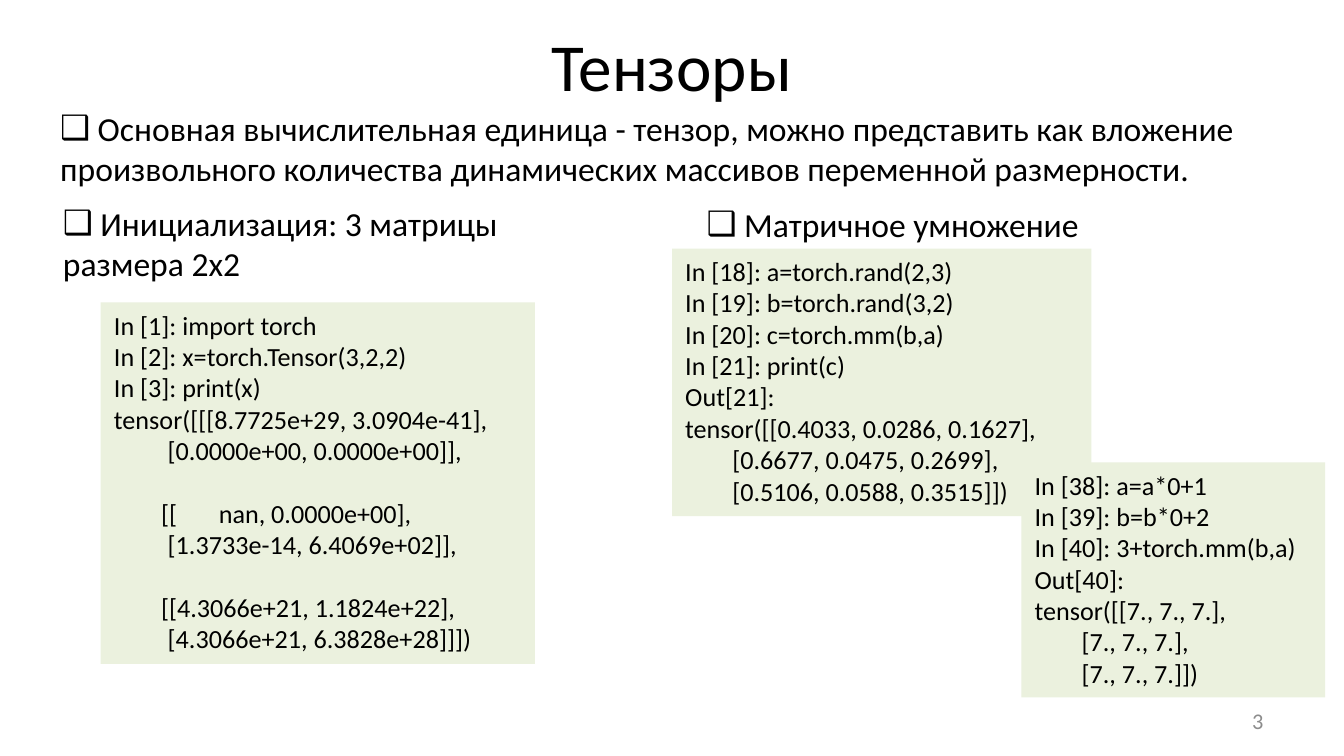
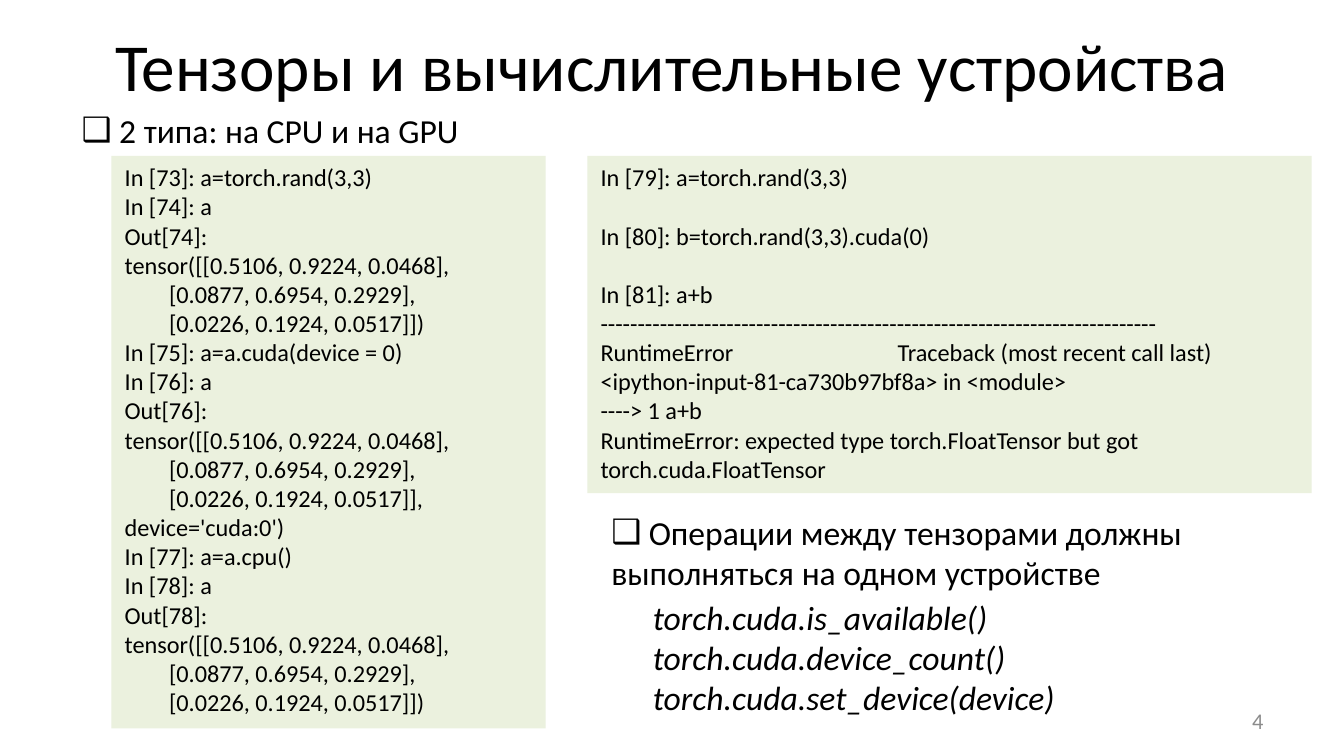
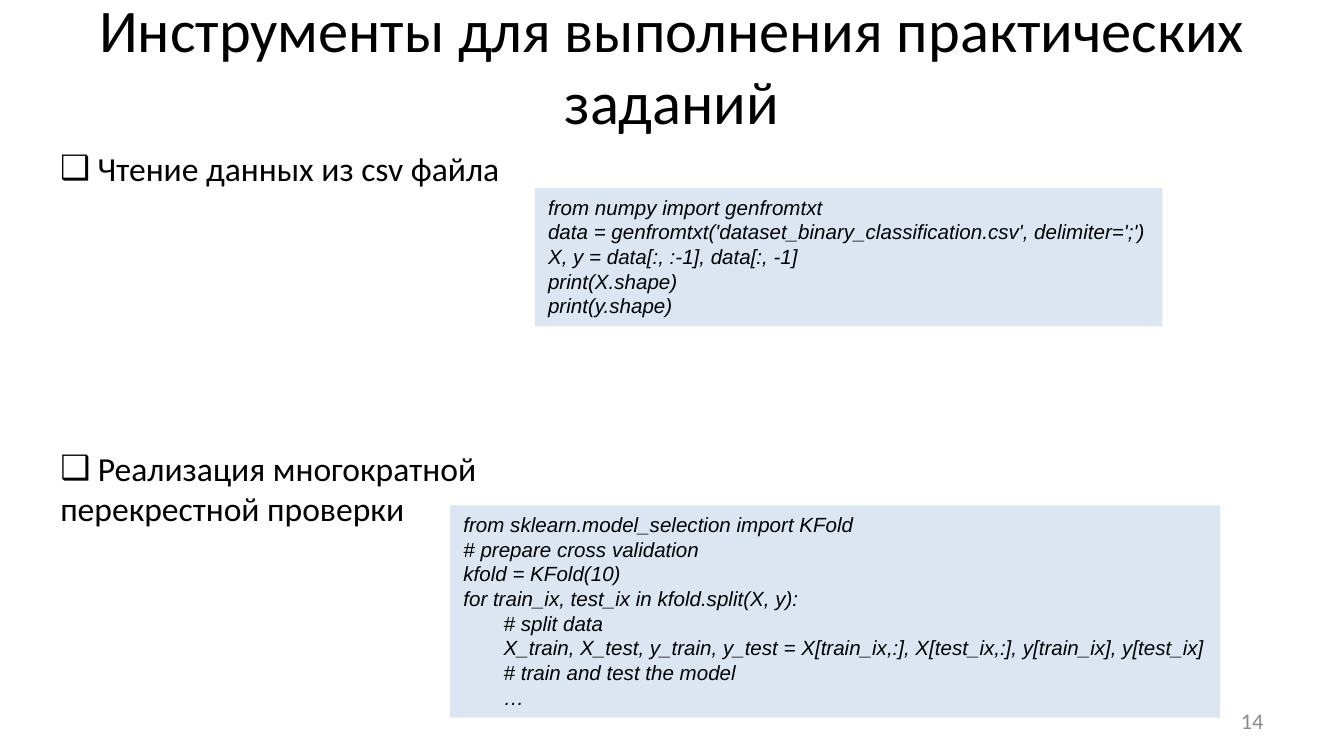
from lxml.etree import SubElement
from pptx import Presentation
from pptx.dml.color import RGBColor
from pptx.enum.shapes import MSO_SHAPE
from pptx.enum.text import MSO_ANCHOR, MSO_AUTO_SIZE, PP_ALIGN
from pptx.oxml.ns import qn
from pptx.util import Inches, Pt

BLACK, GRAY, GREEN, BLUE = "000000", "8C8C8C", "EBF1DE", "DCE6F2"
TITLE_BOX = (0.5, 0.01, 9, 0.94)
NUMBER_BOX = (7.17, 5.21, 2.33, 0.3)
SCRIPT = dict(fill=BLUE, size=11, font="Arial", italic=True, wrap=False)


def row(text, indent=0.35, **fmt):
    return text, dict(indent=indent, **fmt)


def session(size):
    return dict(fill=GREEN, size=size)


RANDOM_ROWS = [
    "tensor([[0.5106, 0.9224, 0.0468],",
    row("[0.0877, 0.6954, 0.2929],", 0.33),
]
LAST_ROW = "[0.0226, 0.1924, 0.0517]]"

SLIDES = [
    dict(
        title="Тензоры", number="3", title_size=36,
        bullets=[
            ((0.35, 0.75, 9.37, 0.71), "Основная вычислительная единица - тензор, можно представить как вложение произвольного количества динамических массивов переменной размерности.", True),
            ((0.37, 1.46, 3.6, 0.71), "Инициализация: 3 матрицы размера 2x2", True),
            ((5.16, 1.47, 3, 0.4), "Матричное умножение", False),
        ],
        blocks=[
            ((0.75, 2.25, 3.23, 2.69), [
                "In [1]: import torch",
                "In [2]: x=torch.Tensor(3,2,2)",
                "In [3]: print(x)",
                "tensor([[[8.7725e+29, 3.0904e-41],",
                row("[0.0000e+00, 0.0000e+00]],", 0.4),
                row("\t[[\tnan, 0.0000e+00],", 0, gap=True, tabs=(0.35, 0.78)),
                row("[1.3733e-14, 6.4069e+02]],", 0.4),
                row("[[4.3066e+21, 1.1824e+22],", gap=True),
                row("[4.3066e+21, 6.3828e+28]]])", 0.4),
            ], session(14)),
            ((5, 1.85, 3.12, 1.99), [
                "In [18]: a=torch.rand(2,3)",
                "In [19]: b=torch.rand(3,2)",
                "In [20]: c=torch.mm(b,a)",
                "In [21]: print(c)",
                "Out[21]:",
                "tensor([[0.4033, 0.0286, 0.1627],",
                row("[0.6677, 0.0475, 0.2699],"),
                row("[0.5106, 0.0588, 0.3515]])"),
            ], session(14)),
            ((7.6, 3.44, 2.26, 1.75), [
                "In [38]: a=a*0+1",
                "In [39]: b=b*0+2",
                "In [40]: 3+torch.mm(b,a)",
                "Out[40]:",
                "tensor([[7., 7., 7.],",
                row("[7., 7., 7.],"),
                row("[7., 7., 7.]])"),
            ], session(14)),
        ],
    ),
    dict(
        title="Тензоры и вычислительные устройства", number="4", title_size=36,
        bullets=[
            ((0.51, 0.77, 3.04, 0.4), "2 типа: на CPU и на GPU", False),
            ((4.45, 3.76, 5.2, 0.71), "Операции между тензорами должны выполняться на одном устройстве", True),
        ],
        blocks=[
            ((0.83, 1.16, 3.23, 4.26), [
                "In [73]: a=torch.rand(3,3)",
                "In [74]: a",
                "Out[74]:",
                *RANDOM_ROWS,
                row(LAST_ROW + ")", 0.33),
                "In [75]: a=a.cuda(device = 0)",
                "In [76]: a",
                "Out[76]:",
                *RANDOM_ROWS,
                row(LAST_ROW + ", device='cuda:0')", 0.33),
                "In [77]: a=a.cpu()",
                "In [78]: a",
                "Out[78]:",
                *RANDOM_ROWS,
                row(LAST_ROW + ")", 0.33),
            ], session(13)),
            ((4.37, 1.16, 5.39, 2.51), [
                "In [79]: a=torch.rand(3,3)",
                row("In [80]: b=torch.rand(3,3).cuda(0)", 0, gap=True),
                row("In [81]: a+b", 0, gap=True),
                "-" * 75,
                row("RuntimeError\tTraceback (most recent call last)", 0, tabs=(2.21,)),
                "<ipython-input-81-ca730b97bf8a> in <module>",
                "----> 1 a+b",
                "RuntimeError: expected type torch.FloatTensor but got torch.cuda.FloatTensor",
            ], session(13)),
            ((4.76, 4.39, 3.46, 1.01), [
                "torch.cuda.is_available()",
                "torch.cuda.device_count()",
                "torch.cuda.set_device(device)",
            ], dict(size=18, italic=True)),
        ],
    ),
    dict(
        title="Инструменты для выполнения практических заданий", number="14", title_size=32.4,
        bullets=[
            ((0.35, 1.05, 9.37, 0.4), "Чтение данных из csv файла", True),
            ((0.35, 3.28, 4.02, 0.71), "Реализация многократной перекрестной проверки", True),
        ],
        blocks=[
            ((3.98, 1.4, 4.67, 1.03), [
                "from numpy import genfromtxt",
                "data = genfromtxt('dataset_binary_classification.csv', delimiter=';')",
                "X, y = data[:, :-1], data[:, -1]",
                "print(X.shape)",
                "print(y.shape)",
            ], SCRIPT),
            ((3.35, 3.76, 5.73, 1.58), [
                "from sklearn.model_selection import KFold",
                "# prepare cross validation",
                "kfold = KFold(10)",
                "for train_ix, test_ix in kfold.split(X, y):",
                row("# split data", 0.3),
                row("X_train, X_test, y_train, y_test = X[train_ix,:], X[test_ix,:], y[train_ix], y[test_ix]", 0.3),
                row("# train and test the model", 0.3),
                row("…", 0.3),
            ], SCRIPT),
        ],
    ),
]


def rgb(color):
    return RGBColor.from_string(color)


def place(sp, box):
    sp.left, sp.top, sp.width, sp.height = map(Inches, box)


def format_paragraph(p, size, indent=0, gap=False, tabs=(), bullet=None):
    if gap:
        p.space_before = Pt(size * 1.2)
    pPr = p._p.get_or_add_pPr()
    if indent:
        pPr.set("marL", "0")
        pPr.set("indent", str(Inches(indent)))
    if bullet:
        SubElement(pPr, qn("a:buFont"), typeface="Arial")
        SubElement(pPr, qn("a:buChar"), char=bullet)
    if tabs:
        tab_list = SubElement(pPr, qn("a:tabLst"))
        for tab in tabs:
            SubElement(tab_list, qn("a:tab"), pos=str(Inches(tab)), algn="l")


def write(sp, lines, size=18, font="Calibri", color=BLACK, italic=False, align=PP_ALIGN.LEFT,
          anchor=MSO_ANCHOR.TOP, wrap=True, grow=True, bullet=None):
    tf = sp.text_frame
    tf.word_wrap = wrap
    tf.auto_size = MSO_AUTO_SIZE.SHAPE_TO_FIT_TEXT if grow else MSO_AUTO_SIZE.NONE
    tf.vertical_anchor = anchor
    for i, line in enumerate(lines):
        text, fmt = (line, {}) if isinstance(line, str) else line
        p = tf.add_paragraph() if i else tf.paragraphs[0]
        p.alignment = align
        format_paragraph(p, size, bullet=bullet, **fmt)
        r = p.add_run()
        r.text = text
        r.font.name, r.font.size, r.font.italic = font, Pt(size), italic
        r.font.color.rgb = rgb(color)


def add_text(s, box, lines, fill=None, **fmt):
    if fill:
        sp = s.shapes.add_shape(MSO_SHAPE.RECTANGLE, *map(Inches, box))
        sp.shadow.inherit = False
        sp.fill.solid()
        sp.fill.fore_color.rgb = rgb(fill)
        sp.line.fill.background()
    else:
        sp = s.shapes.add_textbox(*map(Inches, box))
    write(sp, lines, **fmt)


def add_slide(prs, content):
    s = prs.slides.add_slide(prs.slide_layouts[5])
    place(s.shapes.title, TITLE_BOX)
    write(s.shapes.title, [content["title"]], size=content["title_size"],
          align=PP_ALIGN.CENTER, anchor=MSO_ANCHOR.MIDDLE, grow=False)
    for box, text, wrap in content["bullets"]:
        add_text(s, box, [" " + text], wrap=wrap, bullet="❑")
    for box, lines, fmt in content["blocks"]:
        add_text(s, box, lines, **fmt)
    add_text(s, NUMBER_BOX, [content["number"]], size=12, color=GRAY,
             align=PP_ALIGN.RIGHT, anchor=MSO_ANCHOR.MIDDLE, grow=False)


def main():
    prs = Presentation()
    prs.slide_width = Inches(10)
    prs.slide_height = prs.slide_width * 9 // 16
    for content in SLIDES:
        add_slide(prs, content)
    prs.save("out.pptx")


if __name__ == "__main__":
    main()
